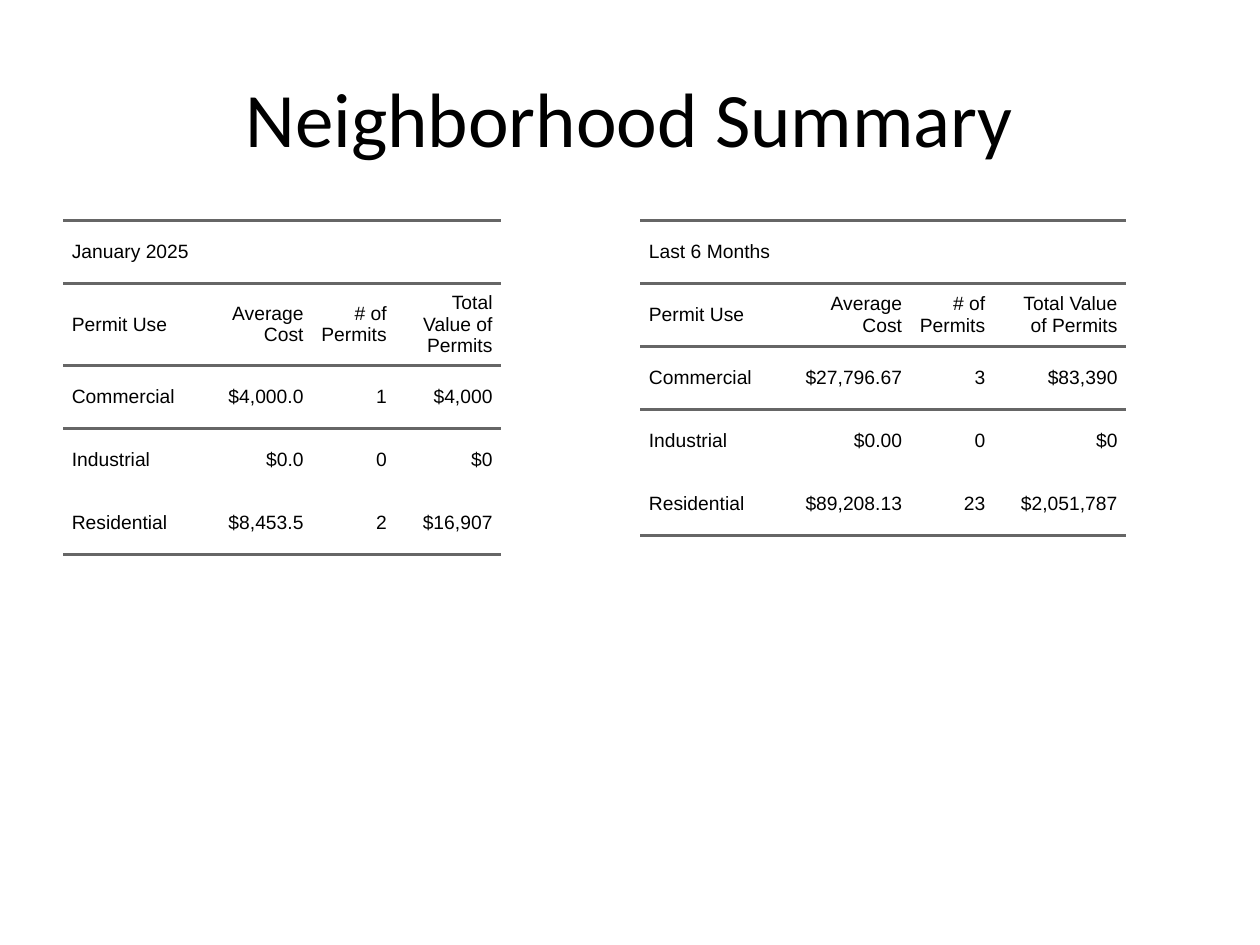
"""Build the neighborhood summary slide with two permit tables."""
from lxml.etree import fromstring
from pptx import Presentation
from pptx.dml.color import RGBColor
from pptx.enum.text import MSO_ANCHOR, PP_ALIGN
from pptx.oxml.ns import nsdecls, qn
from pptx.util import Inches, Pt

TITLE = "Neighborhood Summary"
HEADINGS = ("Permit Use", "Average Cost", "# of Permits", "Total Value of Permits")
PERIODS = [
    {
        "name": "January 2025",
        "left": 0.5,
        "columns": (1.1, 0.88, 0.66, 0.84),
        "permits": [
            ("Commercial", "$4,000.0", "1", "$4,000"),
            ("Industrial", "$0.0", "0", "$0"),
            ("Residential", "$8,453.5", "2", "$16,907"),
        ],
    },
    {
        "name": "Last 6 Months",
        "left": 5.08,
        "columns": (1.1, 1.05, 0.66, 1.05),
        "permits": [
            ("Commercial", "$27,796.67", "3", "$83,390"),
            ("Industrial", "$0.00", "0", "$0"),
            ("Residential", "$89,208.13", "23", "$2,051,787"),
        ],
    },
]
THEME = {
    "title": {"name": "Calibri", "size": Pt(44)},
    "body": {"name": "Arial", "size": Pt(11)},
    "ink": RGBColor(0, 0, 0),
    "rule": "666666",
    "rule_width": Pt(1.5),
    "plain_table": "{2D5ABB26-0587-4C30-8999-92F81FD0307C}",
}
TOP, ROW_HEIGHT, PADDING = 1.75, 0.5, Inches(0.07)
FRAME_SIZE = {"width": Inches(4.42), "height": Inches(4.95)}
TABLE_FORMAT = {"first_row": False, "horz_banding": False}
CELL_FORMAT = {
    "margin_left": 0,
    "margin_right": 0,
    "margin_top": PADDING,
    "margin_bottom": PADDING,
    "vertical_anchor": MSO_ANCHOR.MIDDLE,
}
SPACING = {"space_before": Pt(5), "space_after": Pt(5)}


def apply(target, formats):
    for attribute, value in formats.items():
        setattr(target, attribute, value)


def write(paragraph, words, font, alignment):
    paragraph.alignment = alignment
    run = paragraph.add_run()
    run.text = words
    apply(run.font, THEME[font])
    run.font.color.rgb = THEME["ink"]


def add_rules(cell, sides):
    for position, side in enumerate(sides):
        rule = fromstring(
            f'<a:ln{side} {nsdecls("a")} w="{THEME["rule_width"]}"><a:solidFill>'
            f'<a:srgbClr val="{THEME["rule"]}"/></a:solidFill></a:ln{side}>'
        )
        cell._tc.get_or_add_tcPr().insert(position, rule)


def fill_cell(cell, words, alignment):
    paragraph = cell.text_frame.paragraphs[0]
    write(paragraph, words, "body", alignment)
    apply(paragraph, SPACING)
    for margin in ("marL", "marR"):
        paragraph._p.get_or_add_pPr().set(margin, str(PADDING))


def add_period(slide, period):
    rows = [(period["name"],), HEADINGS, *period["permits"]]
    columns = period["columns"]
    frame = slide.shapes.add_table(
        len(rows), len(columns), Inches(period["left"]), Inches(TOP),
        Inches(sum(columns)), Inches(ROW_HEIGHT * len(rows)),
    )
    table = frame.table
    apply(table, TABLE_FORMAT)
    table._tbl.tblPr.find(qn("a:tableStyleId")).text = THEME["plain_table"]
    for column, width in zip(table.columns, columns):
        column.width = Inches(width)
    table.cell(0, 0).merge(table.cell(0, len(columns) - 1))
    sides = {0: "TB", 1: "TB", 2: "T", len(rows) - 1: "B"}
    for row_index, row in enumerate(rows):
        for cell in table.rows[row_index].cells:
            apply(cell, CELL_FORMAT)
            cell.fill.background()
            add_rules(cell, sides.get(row_index, ""))
        for column_index, words in enumerate(row):
            alignment = PP_ALIGN.RIGHT if column_index else PP_ALIGN.LEFT
            fill_cell(table.cell(row_index, column_index), words, alignment)
    apply(frame, FRAME_SIZE)


def main():
    deck = Presentation()
    apply(deck, {"slide_width": Inches(10), "slide_height": Inches(7.5)})
    slide = deck.slides.add_slide(deck.slide_layouts[6])
    for period in PERIODS:
        add_period(slide, period)
    heading = slide.shapes.add_textbox(Inches(0.5), Inches(0.3), Inches(9), Inches(1.25))
    apply(heading.text_frame, {"word_wrap": True, "vertical_anchor": MSO_ANCHOR.MIDDLE})
    write(heading.text_frame.paragraphs[0], TITLE, "title", PP_ALIGN.CENTER)
    deck.save("out.pptx")


if __name__ == "__main__":
    main()
